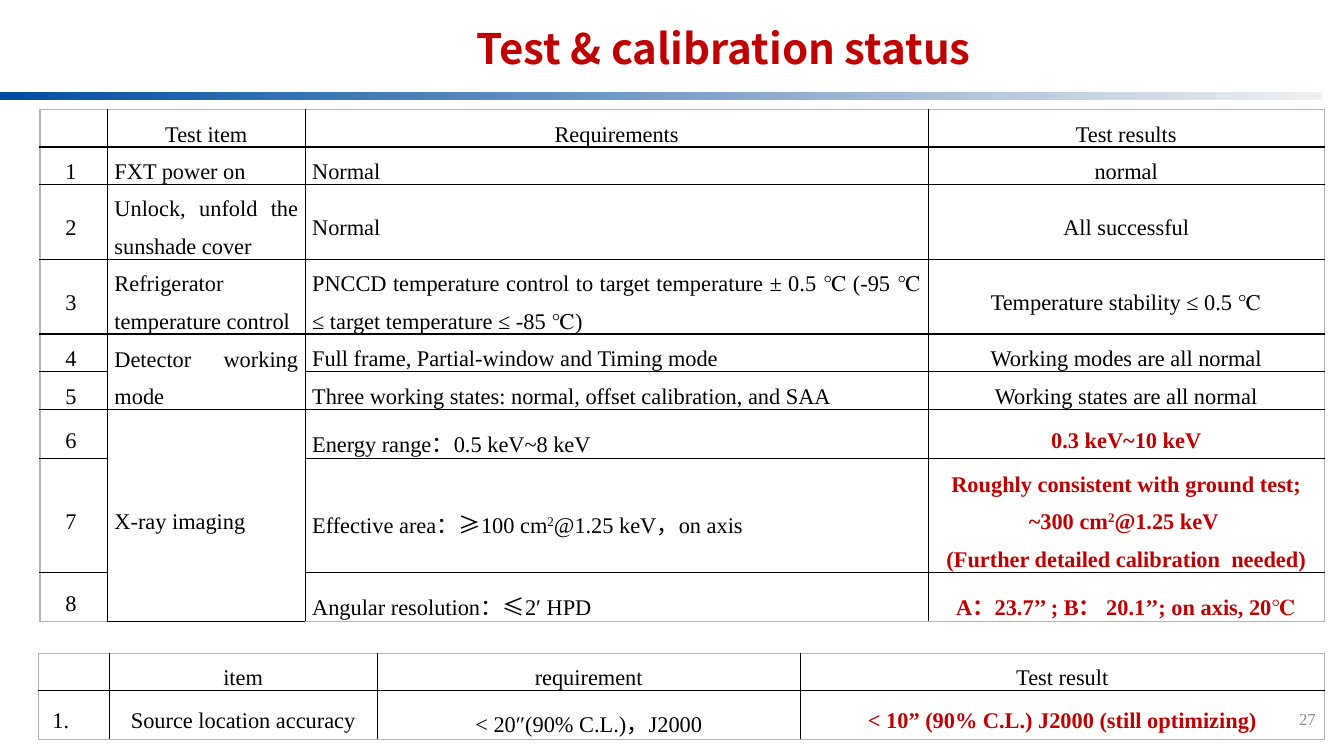
from lxml import etree
from pptx import Presentation
from pptx.dml.color import RGBColor
from pptx.enum.shapes import MSO_SHAPE
from pptx.enum.text import MSO_ANCHOR, PP_ALIGN
from pptx.oxml.ns import qn
from pptx.util import Pt

CENTER, JUSTIFY, LEFT, RIGHT = (
    PP_ALIGN.CENTER, PP_ALIGN.JUSTIFY, PP_ALIGN.LEFT, PP_ALIGN.RIGHT)
TOP, MIDDLE = MSO_ANCHOR.TOP, MSO_ANCHOR.MIDDLE
RECTANGLE = MSO_SHAPE.RECTANGLE

RED = RGBColor(0xC0, 0x00, 0x00)
BLACK = RGBColor(0x00, 0x00, 0x00)
GREY = RGBColor(0x8C, 0x8C, 0x8C)
FRAME_GREY = RGBColor(0xB4, 0xB4, 0xB4)
BAR_BLUE = RGBColor(0x01, 0x4D, 0xA3)
BAR_GREY = RGBColor(0xF0, 0xF0, 0xF0)

SERIF = "Times New Roman"
SANS = "Noto Sans CJK SC"
FULLWIDTH_MARKS = "：，"
LINE_HEIGHT = 26.7
TALL_LINE_HEIGHT = 35

# Text between two ^ signs is superscript.
TEST_ROWS = [
    ("", "Test item", "Requirements", "Test results"),
    ("1", "FXT power on", "Normal", "normal"),
    ("2", "Unlock, unfold the sunshade cover", "Normal", "All successful"),
    ("3", "Refrigerator temperature control",
     "PNCCD temperature control to target temperature ± 0.5 ℃ "
     "(-95 ℃ ≤ target temperature ≤ -85 ℃)",
     "Temperature stability ≤ 0.5 ℃"),
    ("4", "Detector working mode",
     "Full frame, Partial-window and Timing mode",
     "Working modes are all normal"),
    ("5", "", "Three working states: normal, offset calibration, and SAA",
     "Working states are all normal"),
    ("6", "X-ray imaging", "Energy range：0.5 keV~8 keV", "0.3 keV~10 keV"),
    ("7", "", "Effective area：≥100 cm^2^@1.25 keV，on axis",
     "Roughly consistent with ground test;\n~300 cm^2^@1.25 keV \n"
     "(Further detailed calibration  needed)"),
    ("8", "", "Angular resolution：≤2′ HPD",
     "A：23.7’’ ; B： 20.1’’; on axis, 20℃"),
]
TEST_HEIGHTS = [LINE_HEIGHT, LINE_HEIGHT, 2 * LINE_HEIGHT, 2 * LINE_HEIGHT,
                LINE_HEIGHT, 27.5, TALL_LINE_HEIGHT, 81.4, TALL_LINE_HEIGHT]
FIRST_RED_ROW = 6

LOCATION_ROWS = [
    ("", "item", "requirement", "Test result"),
    ("1.", "Source location accuracy", "< 20″(90% C.L.)，J2000",
     "< 10” (90% C.L.) J2000 (still optimizing)"),
]


def format_run(run, size, color, bold=False, font=SERIF):
    run.font.size = Pt(size)
    run.font.name = font
    run.font.bold = bold
    run.font.color.rgb = color


def add_label(slide, text, box, align, anchor, **style):
    label = slide.shapes.add_textbox(*(Pt(length) for length in box))
    frame = label.text_frame
    frame.text = text
    frame.word_wrap = True
    frame.vertical_anchor = anchor
    frame.margin_top = frame.margin_bottom = 0
    frame.paragraphs[0].alignment = align
    format_run(frame.paragraphs[0].runs[0], **style)


def add_title_bar(slide):
    bar = slide.shapes.add_shape(RECTANGLE, 0, Pt(66), Pt(944.6), Pt(5.8))
    bar.shadow.inherit = False
    bar.line.fill.background()
    bar.fill.gradient()
    bar.fill.gradient_angle = 0
    for stop, color in zip(bar.fill.gradient_stops, (BAR_BLUE, BAR_GREY)):
        stop.color.rgb = color


def set_borders(cell, colors):
    """Draw the left, right, top and bottom cell lines in the given colours."""
    properties = cell._tc.get_or_add_tcPr()
    for position, (side, color) in enumerate(zip("LRTB", colors)):
        line = etree.Element(qn(f"a:ln{side}"), w=str(Pt(1)))
        fill = etree.SubElement(line, qn("a:solidFill"))
        etree.SubElement(fill, qn("a:srgbClr"), val=str(color))
        properties.insert(position, line)


def has_fullwidth(text):
    return any(mark in text for mark in FULLWIDTH_MARKS)


def write_cell(cell, text, align, color, bold):
    frame = cell.text_frame
    for number, line in enumerate(text.split("\n")):
        paragraph = frame.add_paragraph() if number else frame.paragraphs[0]
        paragraph.alignment = align
        paragraph.line_spacing = 1.5 if has_fullwidth(line) else Pt(LINE_HEIGHT)
        for index, part in enumerate(line.split("^")):
            run = paragraph.add_run()
            run.text = part
            format_run(run, 16, color, bold)
            properties = run._r.get_or_add_rPr()
            if index % 2:
                properties.set("baseline", "30000")
            if has_fullwidth(part):
                latin = properties.find(qn("a:latin"))
                latin.addnext(etree.Element(qn("a:ea"), typeface=SANS))


def add_grid(slide, rows, left, top, widths, heights, first_red_row,
             body_aligns):
    """Add a table with a centred header and red results from one row on."""
    table = slide.shapes.add_table(
        len(rows), len(widths), Pt(left), Pt(top),
        Pt(sum(widths)), Pt(sum(heights))).table
    table.first_row = table.horz_banding = False
    for column, width in zip(table.columns, widths):
        column.width = Pt(width)
    last_row, last_column = len(rows) - 1, len(widths) - 1
    for r, (row, height) in enumerate(zip(rows, heights)):
        table.rows[r].height = Pt(height)
        for c, text in enumerate(row):
            cell = table.cell(r, c)
            cell.fill.background()
            cell.vertical_anchor = MIDDLE
            cell.margin_left = cell.margin_right = Pt(5)
            cell.margin_top = cell.margin_bottom = 0
            on_edge = (c == 0, c == last_column, r == 0, r == last_row)
            set_borders(cell, [FRAME_GREY if edge else BLACK
                               for edge in on_edge])
            if text:
                is_red = c == last_column and r >= first_red_row
                write_cell(cell, text, body_aligns[c] if r else CENTER,
                           RED if is_red else BLACK, is_red)
    for r in range(1, len(rows)):
        number = table.cell(r, 0)
        if body_aligns[0] == LEFT:
            number.margin_left = Pt(10)
        else:
            number.margin_right = Pt(9)
    return table


def main():
    presentation = Presentation()
    presentation.slide_width = Pt(960)
    presentation.slide_height = Pt(540)
    slide = presentation.slides.add_slide(presentation.slide_layouts[6])

    add_title_bar(slide)
    add_label(slide, "Test & calibration status", (74.2, 16.2, 885.6, 46),
              CENTER, TOP, size=30, color=RED, bold=True, font=SANS)
    add_label(slide, "27", (906, 499, 41, 29), RIGHT, MIDDLE,
              size=12, color=GREY)

    tests = add_grid(slide, TEST_ROWS, 28.6, 78.2, [48.2, 141.2, 445, 283],
                     TEST_HEIGHTS, FIRST_RED_ROW,
                     [CENTER, JUSTIFY, JUSTIFY, CENTER])
    for first, last in ((4, 5), (6, 8)):
        tests.cell(first, 1).merge(tests.cell(last, 1))

    add_grid(slide, LOCATION_ROWS, 27.5, 466.5, [50.5, 191.4, 302.3, 374.3],
             [LINE_HEIGHT, TALL_LINE_HEIGHT], 1,
             [LEFT, CENTER, CENTER, CENTER])
    presentation.save("out.pptx")


if __name__ == "__main__":
    main()
